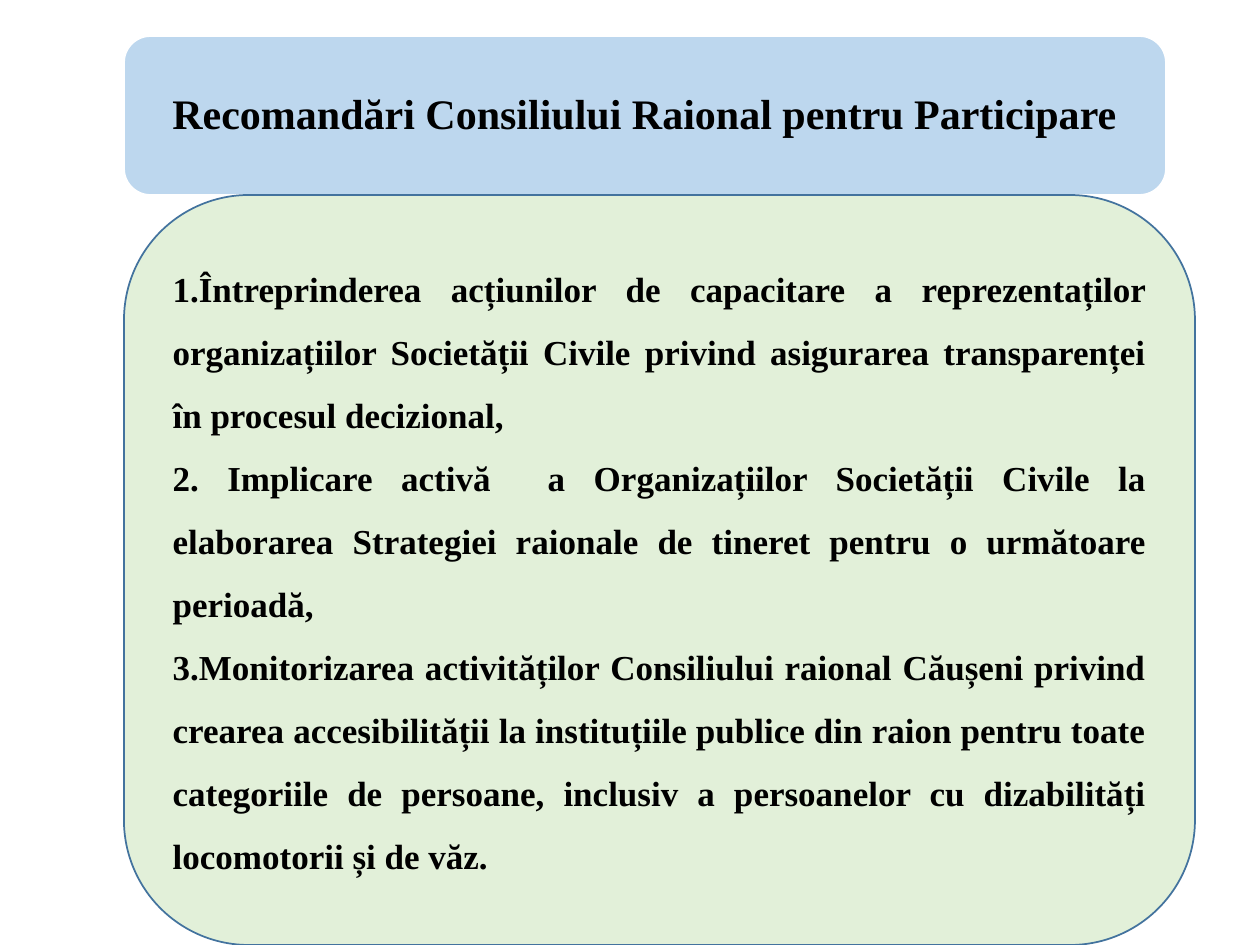
"""Build a slide of recommendations to the district participation council."""
from pptx import Presentation
from pptx.dml.color import RGBColor
from pptx.enum.shapes import MSO_SHAPE as Shape
from pptx.enum.text import MSO_ANCHOR as Anchor, MSO_AUTO_SIZE as AutoSize, PP_ALIGN as Align
from pptx.util import Pt

PX = 914400 // 126
BLACK = RGBColor(0x00, 0x00, 0x00)
WHITE = RGBColor(0xFF, 0xFF, 0xFF)
LIGHT_BLUE = RGBColor(0xBD, 0xD7, 0xEE)
LIGHT_GREEN = RGBColor(0xE2, 0xF0, 0xD9)
BLUE = RGBColor(0x43, 0x73, 0x9E)

TITLE = "Recomandări Consiliului Raional pentru Participare"
RECOMMENDATIONS = [
    "1.Întreprinderea acțiunilor de capacitare a reprezentaților organizațiilor "
    "Societății Civile privind asigurarea transparenței în procesul decizional,",
    "2. Implicare activă  a Organizațiilor Societății Civile la elaborarea "
    "Strategiei raionale de tineret pentru o următoare perioadă,",
    "3.Monitorizarea activităților Consiliului raional Căușeni privind crearea "
    "accesibilității la instituțiile publice din raion pentru toate categoriile de "
    "persoane, inclusiv a persoanelor cu dizabilități locomotorii și de văz.",
]


def add_panel(slide, left, top, width, height, fill, line):
    shape = slide.shapes.add_shape(
        Shape.ROUNDED_RECTANGLE, left * PX, top * PX, width * PX, height * PX)
    shape.shadow.inherit = False
    shape.fill.solid()
    shape.fill.fore_color.rgb = fill
    shape.line.color.rgb = line
    shape.line.width = Pt(1)
    return shape


def write_text(shape, texts, *, size, align, spacing, margins):
    frame = shape.text_frame
    frame.word_wrap = True
    frame.auto_size = AutoSize.NONE
    frame.vertical_anchor = Anchor.MIDDLE
    frame.margin_left, frame.margin_top, frame.margin_right, frame.margin_bottom = (
        margin * PX for margin in margins)
    frame.text = "\n".join(texts)
    for paragraph in frame.paragraphs:
        paragraph.alignment = align
        paragraph.line_spacing = spacing
        paragraph.space_before = Pt(0)
        font = paragraph.runs[0].font
        font.name = "Times New Roman"
        font.size = Pt(size)
        font.bold = True
        font.color.rgb = BLACK


presentation = Presentation()
presentation.slide_width = 1260 * PX
presentation.slide_height = 945 * PX
slide = presentation.slides.add_slide(presentation.slide_layouts[5])

header = add_panel(slide, 124, 36, 1042, 159, LIGHT_BLUE, WHITE)
title = slide.shapes.title
title.left, title.top, title.width, title.height = 131 * PX, 44 * PX, 1027 * PX, 144 * PX
write_text(title, [TITLE], size=24, align=Align.CENTER, spacing=0.9, margins=(13, 13, 13, 13))
header.element.addnext(title.element)

body = add_panel(slide, 124, 195, 1071, 750, LIGHT_GREEN, BLUE)
write_text(body, RECOMMENDATIONS, size=20, align=Align.JUSTIFY, spacing=1.5,
           margins=(12, 6, 12, 24))

presentation.save("out.pptx")
